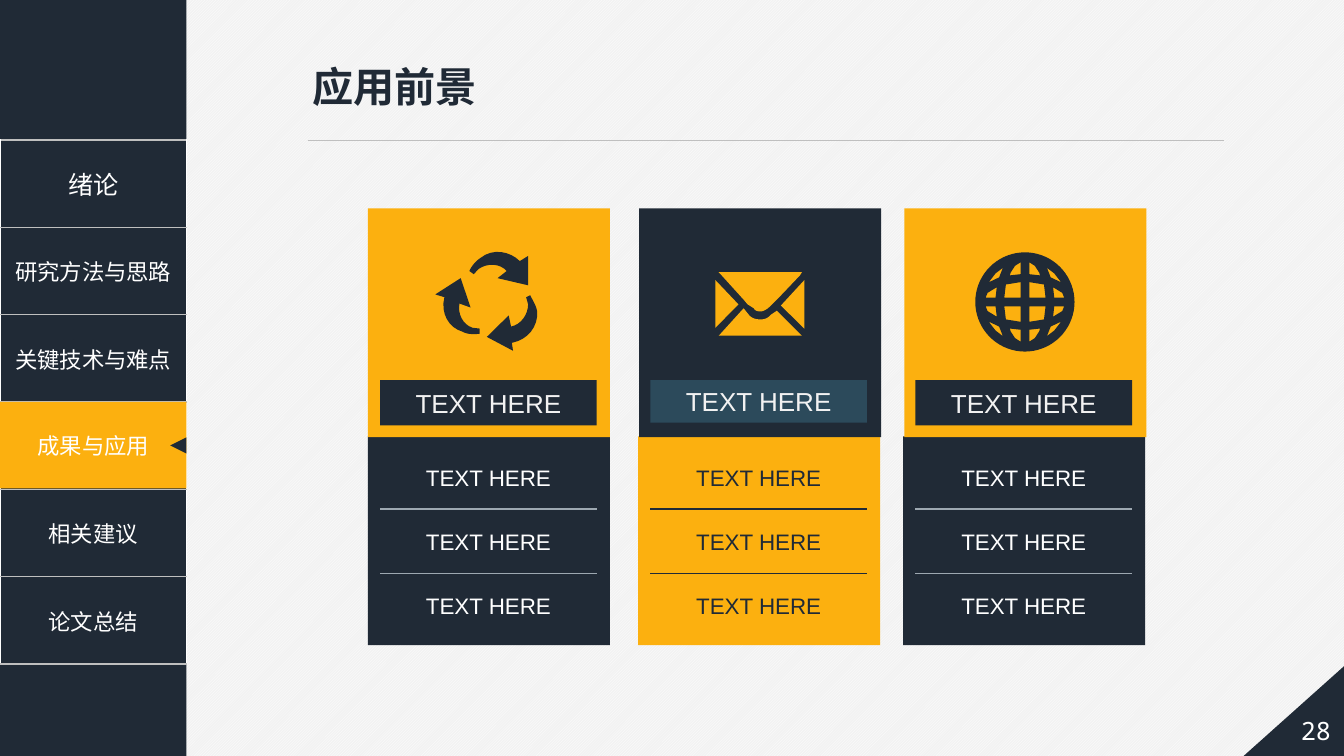
"""Build the application outlook slide with its chapter sidebar."""
import pptx
import pptx.util
import pptx.dml.color
import pptx.enum.dml
import pptx.enum.shapes
import pptx.enum.text
import pptx.oxml.ns
import math
from lxml import etree

Cm = pptx.util.Cm
Pt = pptx.util.Pt
qn = pptx.oxml.ns.qn
KIND = pptx.enum.shapes.MSO_SHAPE
ALIGN = pptx.enum.text.PP_ALIGN
ANCHOR = pptx.enum.text.MSO_ANCHOR

HUES = {"navy": "202A36", "gold": "FCB00F", "white": "FFFFFF", "pale": "F2F2F2",
        "rule": "BFBFBF", "steel": "9DA8B1", "sky": "5ECCF3"}
CJK = "Noto Sans CJK SC"
TOPICS = ["绪论", "研究方法与思路", "关键技术与难点", "成果与应用", "相关建议", "论文总结"]
ACTIVE = 3
SIDE, FIRST, STEP = 4.7, 3.53, 2.2

ARROWS = [
    [(1.96, 2.59), (1.3, 2.24), (1.85, 1.7), (1.91, 1.98),
     (2.16, 1.93, 2.34, 1.68, 2.34, 1.42), (2.29, 1.24), (2.39, 1.19),
     (2.46, 1.32, 2.54, 1.45, 2.57, 1.6), (2.59, 1.98, 2.34, 2.31, 1.93, 2.39)],
    [(0, 1.17), (0.64, 0.76), (0.89, 1.5), (0.61, 1.4),
     (0.56, 1.65, 0.69, 1.93, 0.94, 2.01), (1.12, 2.03), (1.12, 2.16),
     (0.99, 2.18, 0.81, 2.18, 0.69, 2.11), (0.33, 2.01, 0.13, 1.63, 0.23, 1.24)],
    [(2.34, 0.2), (2.13, 0.33), (1.88, 0.08, 1.45, 0, 1.14, 0.25),
     (1.02, 0.33, 0.91, 0.46, 0.86, 0.58), (0.97, 0.66), (1.09, 0.53),
     (1.3, 0.38, 1.63, 0.38, 1.8, 0.58), (1.57, 0.76), (2.34, 0.94)],
]
LETTER = [
    [(0, 0.2), (0, 1.4), (0.58, 0.81)],
    [(2.24, 0.2), (1.65, 0.84), (2.24, 1.42)],
    [(0.08, 0), (0.13, 0.05), (0.71, 0.69), (0.81, 0.81), (0.97, 0.91),
     (0.99, 0.97, 1.07, 0.99, 1.14, 0.99), (1.17, 0.99, 1.24, 0.97, 1.32, 0.91),
     (1.4, 0.84), (1.55, 0.69), (2.13, 0.08), (2.18, 0)],
    [(1.55, 0.97), (1.4, 1.07), (1.32, 1.17, 1.22, 1.19, 1.14, 1.19),
     (1.04, 1.19, 0.91, 1.17, 0.84, 1.07), (0.71, 0.91), (0.13, 1.55),
     (0.08, 1.6), (2.18, 1.6), (2.13, 1.55)],
]
PANES = [
    [(0.11, 1), (0.11, 0.7), (0.38, 0.67), (0.36, 0.74), (0.25, 0.91)],
    [(0.11, 0.5), (0.11, 0.11), (0.52, 0.11), (0.48, 0.44)],
    [(0.74, 0.11), (0.99, 0.11), (0.94, 0.23), (0.76, 0.34), (0.71, 0.37)],
    [(0.65, 0.62), (0.86, 0.52), (0.91, 0.5), (0.74, 0.72), (0.53, 0.88), (0.56, 0.85)],
]


def tint(name):
    """Return the named colour."""
    return pptx.dml.color.RGBColor.from_string(HUES[name])


def write(frame, text, size, hue, face="Arial", align=ALIGN.CENTER, bold=False):
    """Put one styled paragraph into a text frame."""
    para = frame.paragraphs[0]
    para.text = text
    para.alignment = align
    font = para.font
    font.size, font.bold, font.name = Pt(size), bold, face
    font.color.rgb = tint(hue)
    props = para._p.pPr.find(qn("a:defRPr"))
    etree.SubElement(props, qn("a:ea"), typeface=CJK)


def shape(slide, kind, box, hue=None, flip=False):
    """Add a flat preset shape without an outline."""
    item = slide.shapes.add_shape(kind, *map(Cm, box))
    item.shadow.inherit = False
    item.line.fill.background()
    if hue:
        item.fill.solid()
        item.fill.fore_color.rgb = tint(hue)
    else:
        item.fill.background()
    if flip:
        item._element.spPr.get_or_add_xfrm().set("flipH", "1")
    item.text_frame.vertical_anchor = ANCHOR.MIDDLE
    return item


def label(slide, box, text, size, hue, wrap=True, **style):
    """Add a text box."""
    frame = slide.shapes.add_textbox(*map(Cm, box)).text_frame
    frame.word_wrap = wrap
    write(frame, text, size, hue, **style)


def rule(slide, left, top, width, hue, weight):
    """Add a horizontal line."""
    line = slide.shapes.add_connector(
        pptx.enum.shapes.MSO_CONNECTOR.STRAIGHT, *map(Cm, (left, top, left + width, top)))
    line.line.color.rgb = tint(hue)
    line.line.width = Pt(weight)
    etree.SubElement(line._element.spPr, qn("a:effectLst"))


def trace(ring):
    """Turn a ring of points and cubic curves into plain points."""
    dots = []
    for part in ring:
        if len(part) == 2:
            dots.append(part)
            continue
        start, knots = dots[-1], (part[:2], part[2:4], part[4:])
        for step in range(1, 9):
            t = step / 8
            mix = [(1 - t) ** 3, 3 * t * (1 - t) ** 2, 3 * t * t * (1 - t), t ** 3]
            dots.append(tuple(sum(m * p[axis] for m, p in zip(mix, (start, *knots)))
                              for axis in (0, 1)))
    return dots


def icon(slide, left, top, rings, hue):
    """Draw closed rings as one filled outline."""
    pen = None
    for ring in rings:
        dots = [(Cm(left + x), Cm(top + y)) for x, y in trace(ring)]
        if pen is None:
            pen = slide.shapes.build_freeform(*dots[0])
        else:
            pen.move_to(*dots[0])
        pen.add_line_segments(dots[1:], close=True)
    item = pen.convert_to_shape()
    item.shadow.inherit = False
    item.fill.solid()
    item.fill.fore_color.rgb = tint(hue)
    item.line.fill.background()


def globe():
    """Return a disc with window panes mirrored into four quarters."""
    turns = [math.tau * n / 72 for n in range(72)]
    disc = [(1.25 * math.cos(a), 1.25 * math.sin(a)) for a in turns]
    return [disc] + [[(x * h, y * v) for x, y in pane]
                     for pane in PANES for h in (1, -1) for v in (1, -1)]


def edge(cell, side):
    """Give a cell one thin border."""
    line = etree.Element(qn("a:" + side), w=str(Pt(1)))
    fill = etree.SubElement(line, qn("a:solidFill"))
    etree.SubElement(fill, qn("a:srgbClr"), val=HUES["rule"])
    return line


def sidebar(slide):
    """Add the chapter list with the active chapter marked."""
    shape(slide, KIND.RECTANGLE, (0, 0, SIDE, 19.05), "navy")
    table = slide.shapes.add_table(
        len(TOPICS), 1, *map(Cm, (0, FIRST, SIDE, STEP * len(TOPICS)))).table
    table.first_row = table.horz_banding = False
    for row, topic in enumerate(TOPICS):
        cell = table.cell(row, 0)
        cell.vertical_anchor = ANCHOR.MIDDLE
        cell.fill.background()
        write(cell.text_frame, topic, 16 if row else 18, "white", CJK)
        props = cell._tc.get_or_add_tcPr()
        for spot, side in enumerate(("lnT", "lnB")):
            props.insert(spot, edge(cell, side))
    top = FIRST + ACTIVE * STEP
    mark = shape(slide, KIND.RECTANGLE, (0, top, SIDE, 2.18), "gold")
    write(mark.text_frame, TOPICS[ACTIVE], 16, "white", CJK)
    shape(slide, KIND.ISOSCELES_TRIANGLE, (4.29, top + 0.89, 0.41, 0.41), "navy").rotation = 270


def card(slide, left, nudge, head, body, ink, line, plate):
    """Add one card: a head with a title plate above three lines."""
    inner = left + 0.31
    shape(slide, KIND.RECTANGLE, (left, 11, 6.1, 5.26), body)
    for row in range(3):
        label(slide, (inner, 11.56 + row * 1.62, 5.46, 0.94), "TEXT HERE", 16, ink)
    for row in range(2):
        rule(slide, inner, 12.83 + row * 1.62, 5.46, line, 1)
    shape(slide, KIND.RECTANGLE, (left + nudge, 5.25, 6.1, 5.77), head)
    sheer = plate == "sky"
    band = shape(slide, KIND.RECTANGLE, (inner, 9.58, 5.46, 1.07 if sheer else 1.14), plate)
    if sheer:
        shade = band._element.spPr.find(".//" + qn("a:srgbClr"))
        etree.SubElement(shade, qn("a:alpha"), val="20000")
    write(band.text_frame, "TEXT HERE", 18.6, "pale")


def main():
    """Build and save the slide."""
    deck = pptx.Presentation()
    deck.slide_width, deck.slide_height = Cm(33.87), Cm(19.05)
    slide = deck.slides.add_slide(deck.slide_layouts[6])
    back = slide.background.fill
    back.patterned()
    back.pattern = pptx.enum.dml.MSO_PATTERN.LIGHT_UPWARD_DIAGONAL
    back.fore_color.rgb, back.back_color.rgb = tint("white"), tint("pale")

    sidebar(slide)
    rule(slide, 7.75, FIRST, 23.09, "rule", 0.5)
    shape(slide, KIND.RIGHT_TRIANGLE, (31.32, 16.71, 2.64, 2.36), "navy", flip=True)
    page = shape(slide, KIND.PENTAGON, (31.62, 17.7, 2.74, 1.4), flip=True)
    write(page.text_frame, "28", 18, "white", "Noto Sans Mono")

    card(slide, 9.27, 0, "gold", "navy", "white", "steel", "navy")
    card(slide, 16.08, 0.03, "navy", "gold", "navy", "navy", "sky")
    card(slide, 22.76, 0.03, "gold", "navy", "white", "steel", "navy")
    icon(slide, 10.97, 6.25, ARROWS, "navy")
    icon(slide, 18.03, 6.86, LETTER, "gold")
    icon(slide, 25.83, 7.61, globe(), "navy")
    label(slide, (7.62, 1.42, 4.7, 1.5), "应用前景", 29.4, "navy",
          wrap=False, align=ALIGN.LEFT, bold=True)
    deck.save("out.pptx")


if __name__ == "__main__":
    main()
